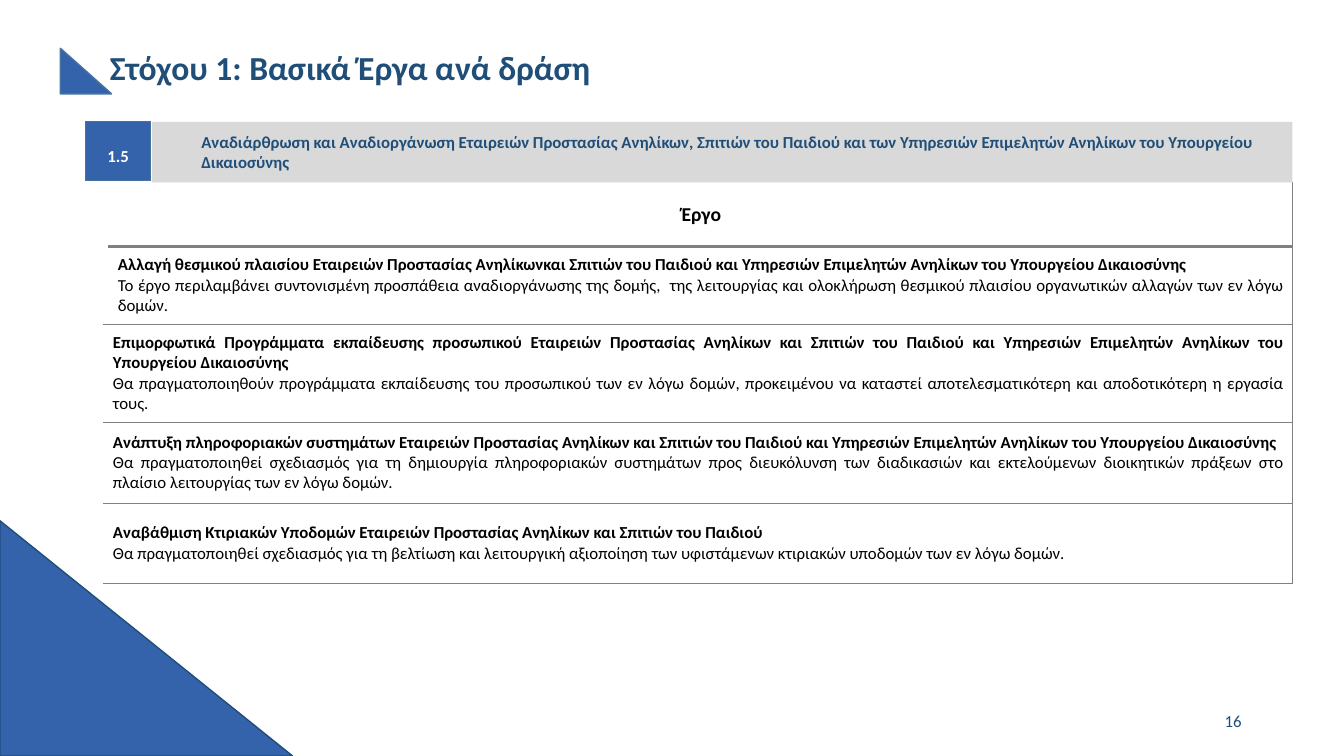
import pptx
import pptx.dml.color
import pptx.enum.shapes
import pptx.enum.text
import pptx.oxml
import pptx.oxml.ns
import pptx.util

Pt = pptx.util.Pt
ALIGN = pptx.enum.text.PP_ALIGN
SHAPE = pptx.enum.shapes.MSO_SHAPE
MIDDLE = pptx.enum.text.MSO_ANCHOR.MIDDLE

NAVY, BLUE, EDGE = "1F4E79", "3462AB", "43739E"
GREY, RULE, BLACK, WHITE = "D9D9D9", "808080", "000000", "FFFFFF"

LEGAL = (
    "Αλλαγή θεσμικού πλαισίου Εταιρειών Προστασίας Ανηλίκωνκαι Σπιτιών του Παιδιού και Υπηρεσιών Επιμελητών Ανηλίκων του Υπουργείου Δικαιοσύνης",
    "Το έργο περιλαμβάνει συντονισμένη προσπάθεια αναδιοργάνωσης της δομής,  της λειτουργίας και ολοκλήρωση θεσμικού πλαισίου οργανωτικών αλλαγών των εν λόγω δομών.",
)
WORKS = [
    ("Επιμορφωτικά Προγράμματα εκπαίδευσης προσωπικού Εταιρειών Προστασίας Ανηλίκων και Σπιτιών του Παιδιού και Υπηρεσιών Επιμελητών Ανηλίκων του Υπουργείου Δικαιοσύνης",
     "Θα πραγματοποιηθούν προγράμματα εκπαίδευσης του προσωπικού των εν λόγω δομών, προκειμένου να καταστεί αποτελεσματικότερη και αποδοτικότερη η εργασία τους."),
    ("Ανάπτυξη πληροφοριακών συστημάτων Εταιρειών Προστασίας Ανηλίκων και Σπιτιών του Παιδιού και Υπηρεσιών Επιμελητών Ανηλίκων του Υπουργείου Δικαιοσύνης",
     "Θα πραγματοποιηθεί σχεδιασμός για τη δημιουργία πληροφοριακών συστημάτων προς διευκόλυνση των διαδικασιών και εκτελούμενων διοικητικών πράξεων στο πλαίσιο λειτουργίας των εν λόγω δομών."),
    ("Αναβάθμιση Κτιριακών Υποδομών Εταιρειών Προστασίας Ανηλίκων και Σπιτιών του Παιδιού",
     "Θα πραγματοποιηθεί σχεδιασμός για τη βελτίωση και λειτουργική αξιοποίηση των υφιστάμενων κτιριακών υποδομών των εν λόγω δομών."),
]


def color(code):
    return pptx.dml.color.RGBColor.from_string(code)


def style(para, size, code, bold=False, align=ALIGN.LEFT):
    para.alignment = align
    for run in para.runs:
        font = run.font
        font.name, font.size, font.bold = "Calibri", Pt(size), bold
        font.color.rgb = color(code)


def place(shape, box):
    shape.left, shape.top, shape.width, shape.height = map(Pt, box)


def add_title(slide, text, box):
    title = slide.shapes.title
    place(title, box)
    frame = title.text_frame
    frame.text = text
    frame.vertical_anchor = MIDDLE
    para = frame.paragraphs[0]
    para.line_spacing = 0.9
    style(para, 24, NAVY, True)


def add_shape(slide, kind, box, fill, line=None):
    shape = slide.shapes.add_shape(kind, *map(Pt, box))
    shape.shadow.inherit = False
    shape.fill.solid()
    shape.fill.fore_color.rgb = color(fill)
    if line:
        shape.line.color.rgb = color(line)
        shape.line.width = Pt(1)
    else:
        shape.line.fill.background()
    return shape


def add_label(shape, text, code, align=ALIGN.LEFT):
    """Write one bold line into a shape and return its paragraph."""
    frame = shape.text_frame
    frame.word_wrap = True
    frame.vertical_anchor = MIDDLE
    frame.text = text
    para = frame.paragraphs[0]
    style(para, 12, code, True, align)
    return para


def add_number(slide, text, box):
    frame = slide.shapes.add_textbox(*map(Pt, box)).text_frame
    frame.word_wrap = True
    frame.vertical_anchor = MIDDLE
    frame.text = text
    style(frame.paragraphs[0], 12, NAVY, align=ALIGN.RIGHT)


def set_edges(cell, widths):
    """Draw the sides given in points; leave the other sides bare."""
    props = cell._tc.get_or_add_tcPr()
    for side in "LRTB":
        width = widths.get(side, 0)
        paint = f'<a:solidFill><a:srgbClr val="{RULE}"/></a:solidFill>' if width else "<a:noFill/>"
        props.append(pptx.oxml.parse_xml(
            f'<a:ln{side} {pptx.oxml.ns.nsdecls("a")} w="{Pt(width)}">{paint}</a:ln{side}>'))


def fill_cell(cell, lines, edges):
    cell.margin_left = Pt(7.2)
    cell.margin_right = cell.margin_top = cell.margin_bottom = Pt(5.6)
    cell.vertical_anchor = MIDDLE
    set_edges(cell, edges)
    cell.fill.background()
    cell.text_frame.text = "\n".join(lines)
    head, *rest = cell.text_frame.paragraphs
    if rest:
        style(head, 12, BLACK, True, ALIGN.JUSTIFY)
    else:
        style(head, 14, BLACK, True, ALIGN.CENTER)
    for para in rest:
        style(para, 12, BLACK, align=ALIGN.JUSTIFY)


def add_table(slide, left, top, width, heights, rows, edges):
    frame = slide.shapes.add_table(
        len(rows), 1, Pt(left), Pt(top), Pt(width), Pt(sum(heights)))
    table = frame.table
    table.first_row = table.horz_banding = False
    for i, lines in enumerate(rows):
        table.rows[i].height = Pt(heights[i])
        fill_cell(table.cell(i, 0), lines, edges[i])


def main():
    deck = pptx.Presentation()
    deck.slide_width, deck.slide_height = Pt(960), Pt(540)
    slide = deck.slides.add_slide(deck.slide_layouts[5])

    add_shape(slide, SHAPE.RIGHT_TRIANGLE, (0, 372, 209, 168), BLUE, NAVY)
    add_title(slide, "Στόχου 1: Βασικά Έργα ανά δράση", (71.3, 28.8, 828, 41.8))
    add_number(slide, "16", (678, 500.4, 216, 28.8))

    add_table(slide, 77, 130.3, 846.5, (46, 55.5), [("Έργο",), LEGAL],
              [{"R": 1, "B": 2.25}, {"T": 2.25, "R": 1, "B": 1}])
    add_shape(slide, SHAPE.RIGHT_TRIANGLE, (43.2, 34.5, 36.5, 32.5), BLUE, EDGE)
    add_table(slide, 73.5, 231.8, 850, (70, 57.6, 57.6), WORKS,
              [{"T": 1, "R": 1, "B": 1}] * len(WORKS))

    band = add_shape(slide, SHAPE.RECTANGLE, (108.7, 87, 814.5, 43.3), GREY)
    para = add_label(
        band, "Αναδιάρθρωση και Αναδιοργάνωση Εταιρειών Προστασίας Ανηλίκων, Σπιτιών του Παιδιού και των Υπηρεσιών Επιμελητών Ανηλίκων του Υπουργείου Δικαιοσύνης", NAVY)
    para._p.get_or_add_pPr().set("marL", str(Pt(28)))

    badge = add_shape(slide, SHAPE.RECTANGLE, (61.2, 87, 46.4, 42), BLUE, EDGE)
    frame = badge.text_frame
    frame.margin_left = frame.margin_right = frame.margin_top = frame.margin_bottom = 0
    add_label(badge, "1.5", WHITE, ALIGN.CENTER).line_spacing = 1.5

    deck.save("out.pptx")


if __name__ == "__main__":
    main()
